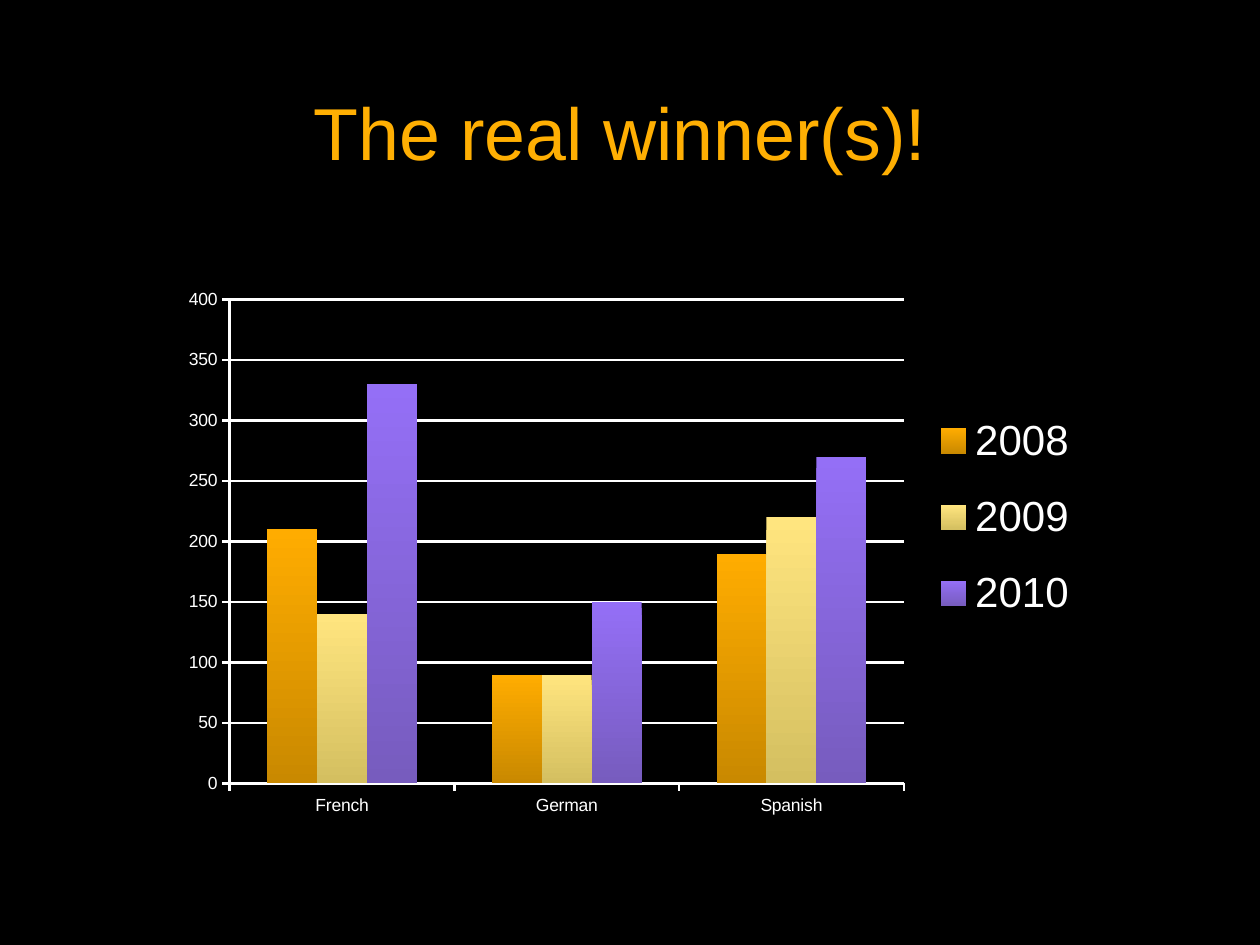
"""Build a slide with a title and a column chart of languages by year."""
from dataclasses import dataclass
from typing import Any

from lxml import etree
from pptx import Presentation
from pptx.chart.data import CategoryChartData
from pptx.dml.color import RGBColor
from pptx.enum.chart import XL_CHART_TYPE, XL_LEGEND_POSITION, XL_TICK_MARK
from pptx.enum.text import MSO_ANCHOR, PP_ALIGN
from pptx.oxml.ns import qn
from pptx.util import Inches, Pt

COLUMNS = XL_CHART_TYPE.COLUMN_CLUSTERED
RIGHT = XL_LEGEND_POSITION.RIGHT
OUT, NONE = XL_TICK_MARK.OUTSIDE, XL_TICK_MARK.NONE
MIDDLE, CENTER = MSO_ANCHOR.MIDDLE, PP_ALIGN.CENTER
WIDTH, HEIGHT = Inches(10), Inches(7.5)


@dataclass(frozen=True)
class Theme:
    """Colours, font and sizes of the slide."""
    face: str = "Arial"
    back: str = "000000"
    ink: str = "FFFFFF"
    accent: str = "FFAF03"
    title: float = 42
    label: float = 10
    legend: float = 24
    line: float = 1.5


@dataclass(frozen=True)
class Box:
    """A place given as shares of its parent's size."""
    x: float
    y: float
    w: float
    h: float

    def place(self) -> tuple[int, int, int, int]:
        """Return left, top, width and height on the slide."""
        return (int(self.x * WIDTH), int(self.y * HEIGHT),
                int(self.w * WIDTH), int(self.h * HEIGHT))


@dataclass(frozen=True)
class Year:
    """One series with its gradient from top to foot."""
    name: str
    values: tuple[int, ...]
    top: str
    foot: str


THEME = Theme()
TITLE = Box(0.067, 0.085, 0.866, 0.115)
CHART = Box(0.135, 0.295, 0.728, 0.58)
PLOT = Box(0.065, 0.038, 0.735, 0.883)
LEGEND = Box(0.825, 0.2, 0.17, 0.47)
LANGS = ("French", "German", "Spanish")
YEARS = (
    Year("2008", (210, 90, 190), "FFAC00", "C98900"),
    Year("2009", (140, 90, 220), "FFE57F", "D4BF60"),
    Year("2010", (330, 150, 270), "946FF6", "775CBE"),
)


def style(font: Any, size: float, color: str) -> None:
    """Set face, size and colour of a font."""
    font.name, font.size = THEME.face, Pt(size)
    font.color.rgb = RGBColor.from_string(color)


def rule(line: Any) -> None:
    """Give a chart line its colour and width."""
    line.color.rgb = RGBColor.from_string(THEME.ink)
    line.width = Pt(THEME.line)


def pin(part: Any, index: int, box: Box, inner: bool = False) -> None:
    """Fix a chart part at a share of the chart."""
    for old in part.findall(qn("c:layout")):
        part.remove(old)
    layout = etree.Element(qn("c:layout"))
    manual = etree.SubElement(layout, qn("c:manualLayout"))
    pairs = [("layoutTarget", "inner")] if inner else []
    pairs += [("xMode", "edge"), ("yMode", "edge")]
    pairs += [(key, str(getattr(box, key))) for key in "xywh"]
    for tag, value in pairs:
        etree.SubElement(manual, qn(f"c:{tag}")).set("val", value)
    part.insert(index, layout)


def add_title(slide: Any, text: str) -> None:
    """Fill and move the title placeholder."""
    title = slide.shapes.title
    title.left, title.top, title.width, title.height = TITLE.place()
    frame = title.text_frame
    frame.text, frame.vertical_anchor, frame.margin_top = text, MIDDLE, 0
    line = frame.paragraphs[0]
    line.alignment = CENTER
    style(line.font, THEME.title, THEME.accent)


def add_columns(slide: Any) -> None:
    """Draw the clustered columns with axes and legend."""
    data = CategoryChartData()
    data.categories = LANGS
    for year in YEARS:
        data.add_series(year.name, year.values)
    chart = slide.shapes.add_chart(COLUMNS, *CHART.place(), data).chart
    chart.has_title = False
    style(chart.font, THEME.label, THEME.ink)

    plot = chart.plots[0]
    plot.gap_width, plot.overlap, plot.vary_by_categories = 150, 0, False
    for bars, year in zip(plot.series, YEARS):
        bars.invert_if_negative = False
        fill = bars.format.fill
        fill.gradient()
        fill.gradient_angle = 270
        for stop, color in zip(fill.gradient_stops, (year.top, year.foot)):
            stop.color.rgb = RGBColor.from_string(color)

    values = chart.value_axis
    values.minimum_scale, values.maximum_scale, values.major_unit = 0, 400, 50
    values.has_major_gridlines = True
    rule(values.major_gridlines.format.line)
    for axis in (values, chart.category_axis):
        axis.major_tick_mark, axis.minor_tick_mark = OUT, NONE
        rule(axis.format.line)

    chart.has_legend = True
    legend = chart.legend
    legend.position, legend.include_in_layout = RIGHT, False
    style(legend.font, THEME.legend, THEME.ink)
    root = chart.element
    pin(root.find(".//" + qn("c:plotArea")), 0, PLOT, inner=True)
    pin(root.find(".//" + qn("c:legend")), 1, LEGEND)


def main() -> None:
    """Make the slide and save it."""
    deck = Presentation()
    deck.slide_width, deck.slide_height = WIDTH, HEIGHT
    slide = deck.slides.add_slide(deck.slide_layouts[5])
    fill = slide.background.fill
    fill.solid()
    fill.fore_color.rgb = RGBColor.from_string(THEME.back)
    add_title(slide, "The real winner(s)! ")
    add_columns(slide)
    deck.save("out.pptx")


if __name__ == "__main__":
    main()
